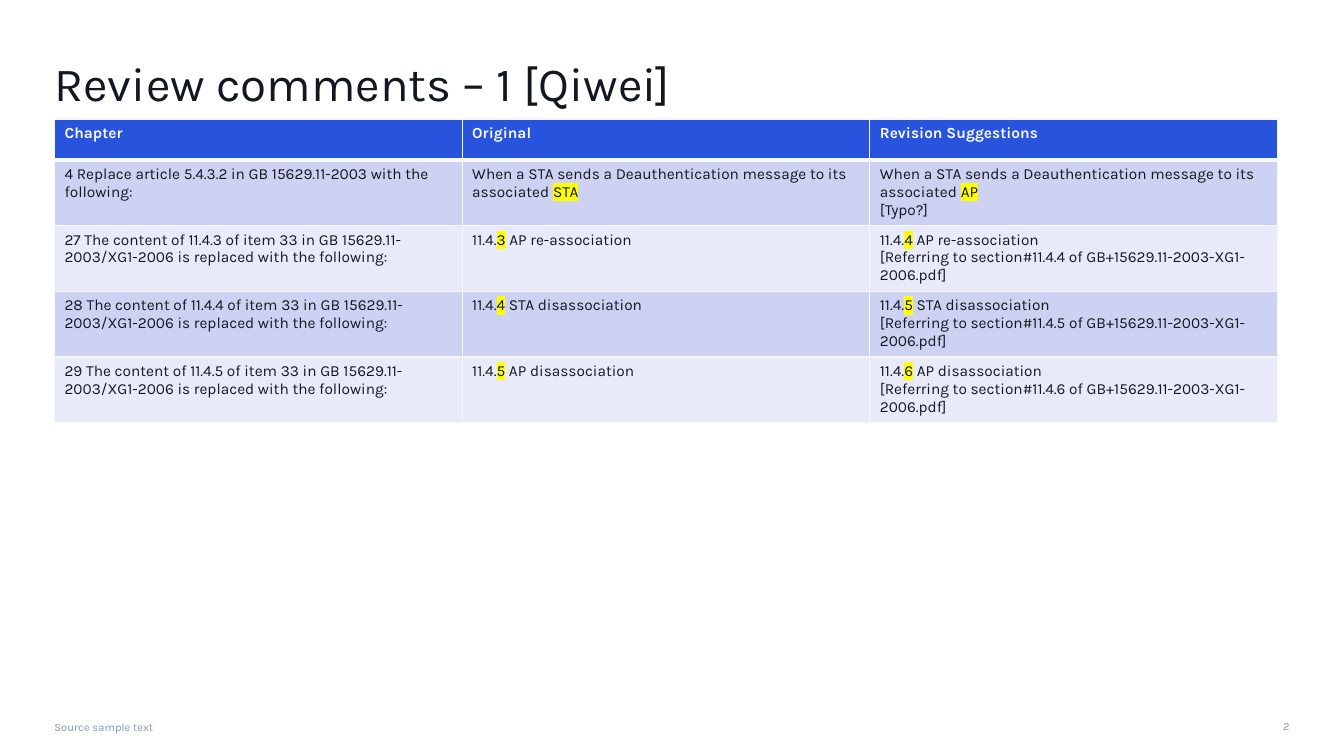
from lxml.etree import SubElement
from pptx import Presentation
from pptx.dml.color import RGBColor
from pptx.enum.text import MSO_ANCHOR, PP_ALIGN
from pptx.oxml.ns import qn
from pptx.util import Inches, Pt

FONT = "Karla"
COLORS = {
    "ink": "13171F",
    "muted": "8498B8",
    "header": "2853DC",
    "light": "F7F8FA",
    "band_dark": "CDD1F2",
    "band_pale": "E8E9F9",
    "highlight": "FFFF00",
}
HEADINGS = ["Chapter", "Original", "Revision Suggestions"]
DEAUTHENTICATION = "When a STA sends a Deauthentication message to its associated "


def section_row(item, section, subject):
    """Row for a section whose number should be raised by one."""
    return [
        f"{item} The content of 11.4.{section} of item 33 in GB 15629.11-2003/XG1-2006 "
        "is replaced with the following:",
        f"11.4.|{section}| {subject}",
        f"11.4.|{section + 1}| {subject}\n"
        f"[Referring to section#11.4.{section + 1} of GB+15629.11-2003-XG1-2006.pdf]",
    ]


# Text between bars is highlighted; a line break starts a paragraph
COMMENTS = [
    [
        "4 Replace article 5.4.3.2 in GB 15629.11-2003 with the following:",
        f"{DEAUTHENTICATION}|STA|",
        f"{DEAUTHENTICATION}|AP|\n[Typo?]",
    ],
    section_row(27, 3, "AP re-association"),
    section_row(28, 4, "STA disassociation"),
    section_row(29, 5, "AP disassociation"),
]


def style_font(font, size, color, bold=False):
    font.name = FONT
    font.size = Pt(size)
    font.bold = bold
    font.color.rgb = RGBColor.from_string(COLORS[color])


def set_up_frame(frame, wrap=True):
    frame.word_wrap = wrap
    frame.vertical_anchor = MSO_ANCHOR.BOTTOM
    frame.margin_left = frame.margin_right = 0
    frame.margin_top = frame.margin_bottom = 0


def add_title(page, text, left, top, width, height):
    title = page.shapes.title
    title.left, title.top = Inches(left), Inches(top)
    title.width, title.height = Inches(width), Inches(height)
    set_up_frame(title.text_frame)
    title.text_frame.text = text
    para = title.text_frame.paragraphs[0]
    para.alignment = PP_ALIGN.LEFT
    para.line_spacing = 0.84
    style_font(para.font, 34, "ink")


def add_small_text(page, text, left, top, width, height, align, wrap, spacing):
    box = page.shapes.add_textbox(
        Inches(left), Inches(top), Inches(width), Inches(height))
    set_up_frame(box.text_frame, wrap)
    para = box.text_frame.paragraphs[0]
    para.text = text
    para.alignment = align
    para.line_spacing = spacing
    style_font(para.font, 8, "muted")
    return para


def add_footer(page, left, right, bottom):
    add_small_text(page, "2", right - 0.14, bottom - 0.16, 0.14, 0.15,
                   PP_ALIGN.RIGHT, False, 1.25)
    source = add_small_text(page, "Source sample text", left, bottom - 0.13, 11.47, 0.13,
                            PP_ALIGN.LEFT, True, 0.96)
    source.space_after = Pt(2.2)


def set_borders(cell, top, bottom):
    properties = cell._tc.get_or_add_tcPr()
    for side, points in (("L", 1), ("R", 1), ("T", top), ("B", bottom)):
        line = SubElement(properties, qn(f"a:ln{side}"), w=str(Pt(points)))
        fill = SubElement(line, qn("a:solidFill"))
        SubElement(fill, qn("a:srgbClr"), val=COLORS["light"])


def highlight(span):
    mark = SubElement(span.font._element, qn("a:highlight"))
    SubElement(mark, qn("a:srgbClr"), val=COLORS["highlight"])


def fill_cell(cell, text, fill, color, bold):
    cell.fill.solid()
    cell.fill.fore_color.rgb = RGBColor.from_string(COLORS[fill])
    frame = cell.text_frame
    for number, line in enumerate(text.split("\n")):
        para = frame.add_paragraph() if number else frame.paragraphs[0]
        style_font(para.font, 11, color, bold)
        for position, part in enumerate(line.split("|")):
            if part:
                span = para.add_run()
                span.text = part
                if position % 2:
                    highlight(span)


def add_comment_table(page, left, top, width, header_height, row_height):
    rows = [HEADINGS] + COMMENTS
    table = page.shapes.add_table(
        len(rows), len(HEADINGS), Inches(left), Inches(top), Inches(width),
        Inches(header_height + row_height * len(COMMENTS))).table
    for column in table.columns:
        column.width = Inches(width / len(HEADINGS))
    for r, texts in enumerate(rows):
        is_header = r == 0
        table.rows[r].height = Inches(header_height if is_header else row_height)
        band = "header" if is_header else ("band_pale", "band_dark")[r % 2]
        for c, text in enumerate(texts):
            cell = table.cell(r, c)
            # A thick rule parts the header from the comments
            set_borders(cell, 3 if r == 1 else 1, 3 if is_header else 1)
            fill_cell(cell, text, band, "light" if is_header else "ink", is_header)


def main():
    deck = Presentation()
    deck.slide_width, deck.slide_height = Inches(13.33), Inches(7.5)
    page = deck.slides.add_slide(deck.slide_layouts[5])
    add_footer(page, left=0.54, right=12.79, bottom=7.28)
    add_title(page, "Review comments – 1 [Qiwei]", 0.54, 0.62, 12.23, 0.48)
    add_comment_table(page, 0.54, 1.18, 12.13, header_height=0.41, row_height=0.63)
    deck.save("out.pptx")


if __name__ == "__main__":
    main()
